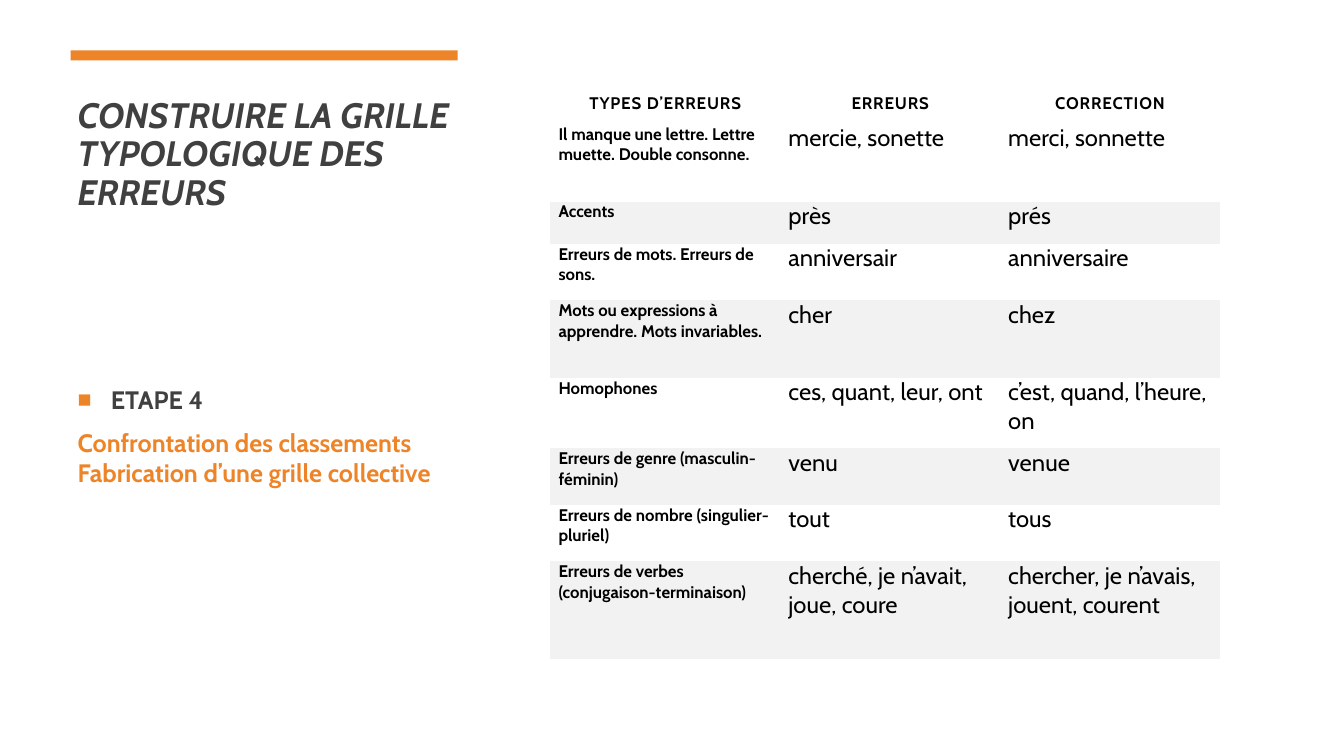
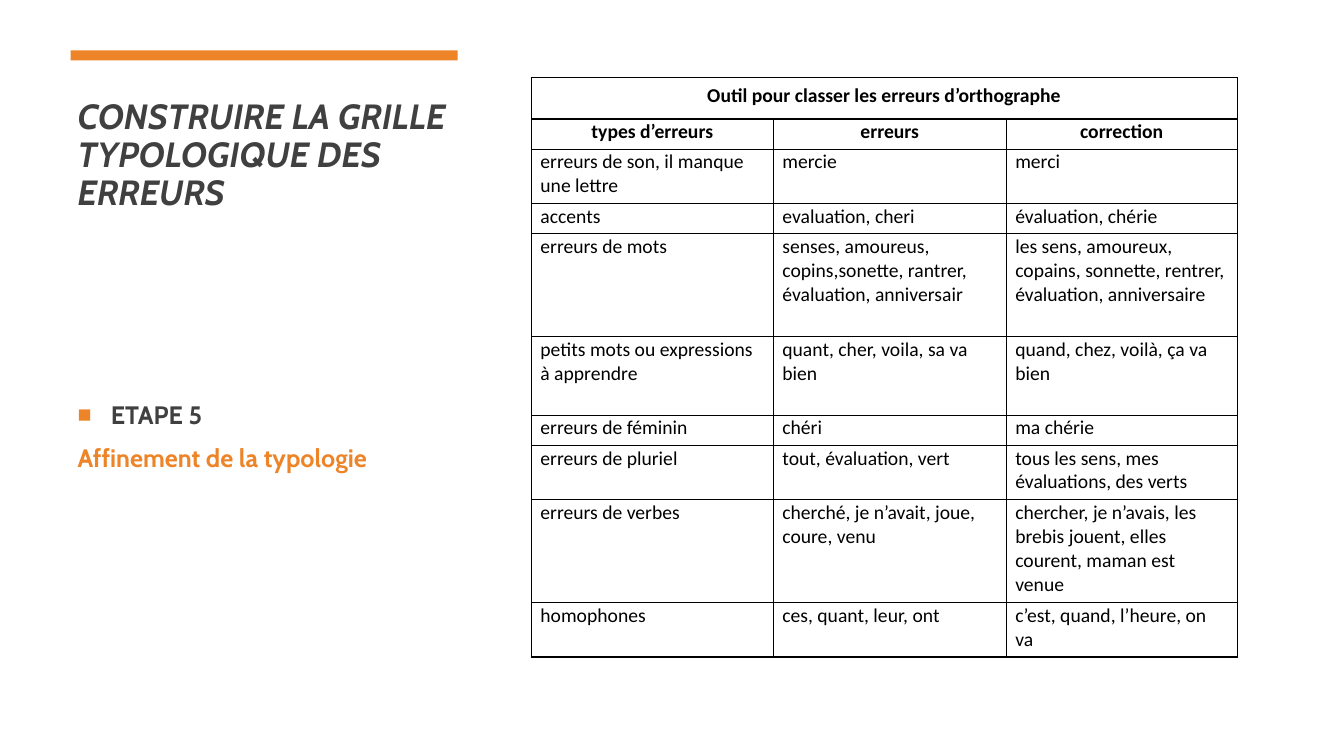
from lxml.etree import SubElement
from pptx import Presentation
from pptx.dml.color import RGBColor
from pptx.enum.shapes import MSO_SHAPE as Shape
from pptx.enum.text import MSO_ANCHOR as Anchor, MSO_AUTO_SIZE as Fit, PP_ALIGN as Align
from pptx.oxml.ns import qn
from pptx.util import Emu, Pt

PX = 9144  # 100 px to the inch
WIDE, HIGH = 1333, 750
COLORS = {"ink": "404040", "accent": "ED8428", "band": "F2F2F2", "black": "000000"}
FONT = "Cabin"
NO_GRID = "{2D5ABB26-0587-4C30-8999-92F81FD0307C}"

BAR = (70, 50, 384, 10)
TITLE_BOX = (67, 77, 390, 139)
BODY_BOX = (67, 256, 390, 397)
TITLE = "CONSTRUIRE LA GRILLE TYPOLOGIQUE DES ERREURS"

CLASS_GRID = {
    "at": (546, 77),
    "cols": [228, 218, 218],
    "rows": [46, 77, 42, 56, 77, 70, 56, 56, 97],
    "cells": [
        ("TYPES D’ERREURS", "ERREURS", "CORRECTION"),
        ("Il manque une lettre. Lettre muette. Double consonne.",
         "mercie, sonette", "merci, sonnette"),
        ("Accents", "près", "prés"),
        ("Erreurs de mots. Erreurs de sons.", "anniversair", "anniversaire"),
        ("Mots ou expressions à apprendre. Mots invariables.", "cher", "chez"),
        ("Homophones", "ces, quant, leur, ont", "c’est, quand, l’heure, on"),
        ("Erreurs de genre (masculin-féminin)", "venu", "venue"),
        ("Erreurs de nombre (singulier-pluriel)", "tout", "tous"),
        ("Erreurs de verbes (conjugaison-terminaison)",
         "cherché, je n’avait, joue, coure", "chercher, je n’avais, jouent, courent"),
    ],
}
TOOL_GRID = {
    "at": (527, 77),
    "cols": [240, 231, 229],
    "rows": [41, 30, 54, 30, 102, 78, 30, 54, 102, 54],
    "cells": [
        ("Outil pour classer les erreurs d’orthographe",),
        ("types d’erreurs", "erreurs", "correction"),
        ("erreurs de son, il manque une lettre", "mercie", "merci"),
        ("accents", "evaluation, cheri", "évaluation, chérie"),
        ("erreurs de mots",
         "senses, amoureus, copins,sonette, rantrer, évaluation, anniversair",
         "les sens, amoureux, copains, sonnette, rentrer, évaluation, anniversaire"),
        ("petits mots ou expressions à apprendre",
         "quant, cher, voila, sa va bien", "quand, chez, voilà, ça va bien"),
        ("erreurs de féminin", "chéri", "ma chérie"),
        ("erreurs de pluriel", "tout, évaluation, vert",
         "tous les sens, mes évaluations, des verts"),
        ("erreurs de verbes", "cherché, je n’avait, joue, coure, venu",
         "chercher, je n’avais, les brebis jouent, elles courent, maman est venue"),
        ("homophones", "ces, quant, leur, ont", "c’est, quand, l’heure, on va"),
    ],
}


def px(*vals):
    return [Emu(val * PX) for val in vals]


def rgb(name):
    return RGBColor.from_string(COLORS[name])


def style(para, size, color, bold=False, italic=False, font=FONT):
    for run in para.runs:
        face = run.font
        face.name, face.size = font, Pt(size)
        face.bold, face.italic = bold, italic
        face.color.rgb = rgb(color)


def place(shape, box):
    shape.left, shape.top, shape.width, shape.height = px(*box)


def add_bullet(props):
    tint = SubElement(props, qn("a:buClr"))
    SubElement(tint, qn("a:srgbClr"), val=COLORS["accent"])
    SubElement(props, qn("a:buSzPct"), val="92000")
    SubElement(props, qn("a:buFont"), typeface="Arial")
    SubElement(props, qn("a:buChar"), char="■")


def add_border(cell):
    props = cell._tc.get_or_add_tcPr()
    for side in ("lnL", "lnR", "lnT", "lnB"):
        line = SubElement(props, qn("a:" + side), w=str(Pt(1)))
        fill = SubElement(line, qn("a:solidFill"))
        SubElement(fill, qn("a:srgbClr"), val=COLORS["black"])


def add_page(deck, size, step, note):
    """Add a slide with the bar, the title and the step at left."""
    slide = deck.slides.add_slide(deck.slide_layouts[1])
    title, body = slide.placeholders
    place(title, TITLE_BOX)
    frame = title.text_frame
    frame.text = TITLE
    frame.word_wrap, frame.auto_size = True, Fit.NONE
    frame.vertical_anchor = Anchor.BOTTOM
    para = frame.paragraphs[0]
    para.alignment, para.line_spacing = Align.LEFT, 0.9
    style(para, size, "ink", bold=True, italic=True)

    bar = slide.shapes.add_shape(Shape.RECTANGLE, *px(*BAR))
    bar.shadow.inherit = False
    bar.fill.solid()
    bar.fill.fore_color.rgb = rgb("accent")
    bar.line.fill.background()

    place(body, BODY_BOX)
    frame = body.text_frame
    frame.text = f"{step}\n{note}"
    frame.word_wrap, frame.auto_size = True, Fit.NONE
    frame.vertical_anchor = Anchor.MIDDLE
    frame.margin_bottom = px(49)[0]
    for para, color in zip(frame.paragraphs, ("ink", "accent")):
        para.space_before, para.space_after = Pt(3), Pt(6)
        style(para, 18, color, bold=True)
        props = para._p.get_or_add_pPr()
        dent = px(33)[0] if color == "ink" else 0
        props.set("marL", str(dent))
        props.set("indent", str(-dent))
        if dent:
            add_bullet(props)
        else:
            SubElement(props, qn("a:buNone"))
    return slide


def add_grid(slide, grid, dress):
    """Add a table and let dress(cell, row, col) format each cell."""
    cols, rows = grid["cols"], grid["rows"]
    box = px(*grid["at"], sum(cols), sum(rows))
    table = slide.shapes.add_table(len(rows), len(cols), *box).table
    table.first_row = table.horz_banding = False
    table._tbl.tblPr.find(qn("a:tableStyleId")).text = NO_GRID
    for col, wide in zip(table.columns, px(*cols)):
        col.width = wide
    for row, high in zip(table.rows, px(*rows)):
        row.height = high
    for r, texts in enumerate(grid["cells"]):
        if len(texts) == 1:
            table.cell(r, 0).merge(table.cell(r, len(cols) - 1))
        for c in range(len(cols)):
            cell = table.cell(r, c)
            if c < len(texts):
                cell.text_frame.text = texts[c]
            dress(cell, r, c)


def set_inset(cell, left, top, right, bottom):
    (cell.margin_left, cell.margin_top,
     cell.margin_right, cell.margin_bottom) = px(left, top, right, bottom)


def dress_class(cell, row, col):
    head = row == 0
    para = cell.text_frame.paragraphs[0]
    set_inset(cell, 8, 10 if head else 0, 8, 10)
    style(para, 12 if head or col == 0 else 17, "black", bold=head or col == 0)
    if head:
        cell.vertical_anchor = Anchor.BOTTOM
        para.alignment = Align.CENTER
        para.runs[0].font._element.set("spc", "60")
    if row and row % 2 == 0:
        cell.fill.solid()
        cell.fill.fore_color.rgb = rgb("band")
    else:
        cell.fill.background()


def dress_tool(cell, row, col):
    head = row < 2
    para = cell.text_frame.paragraphs[0]
    set_inset(cell, *((12, 6, 12, 6) if row == 0 else (9, 1, 9, 0)))
    style(para, 14, "black", bold=head, font="Calibri")
    if head:
        para.alignment = Align.CENTER
    add_border(cell)
    cell.fill.background()


PAGES = [
    (25.2, "ETAPE 4", "Confrontation des classements Fabrication d’une grille collective",
     CLASS_GRID, dress_class),
    (25, "ETAPE 5", "Affinement de la typologie", TOOL_GRID, dress_tool),
]


def main():
    deck = Presentation()
    deck.slide_width, deck.slide_height = px(WIDE, HIGH)
    for size, step, note, grid, dress in PAGES:
        add_grid(add_page(deck, size, step, note), grid, dress)
    deck.save("out.pptx")


if __name__ == "__main__":
    main()
